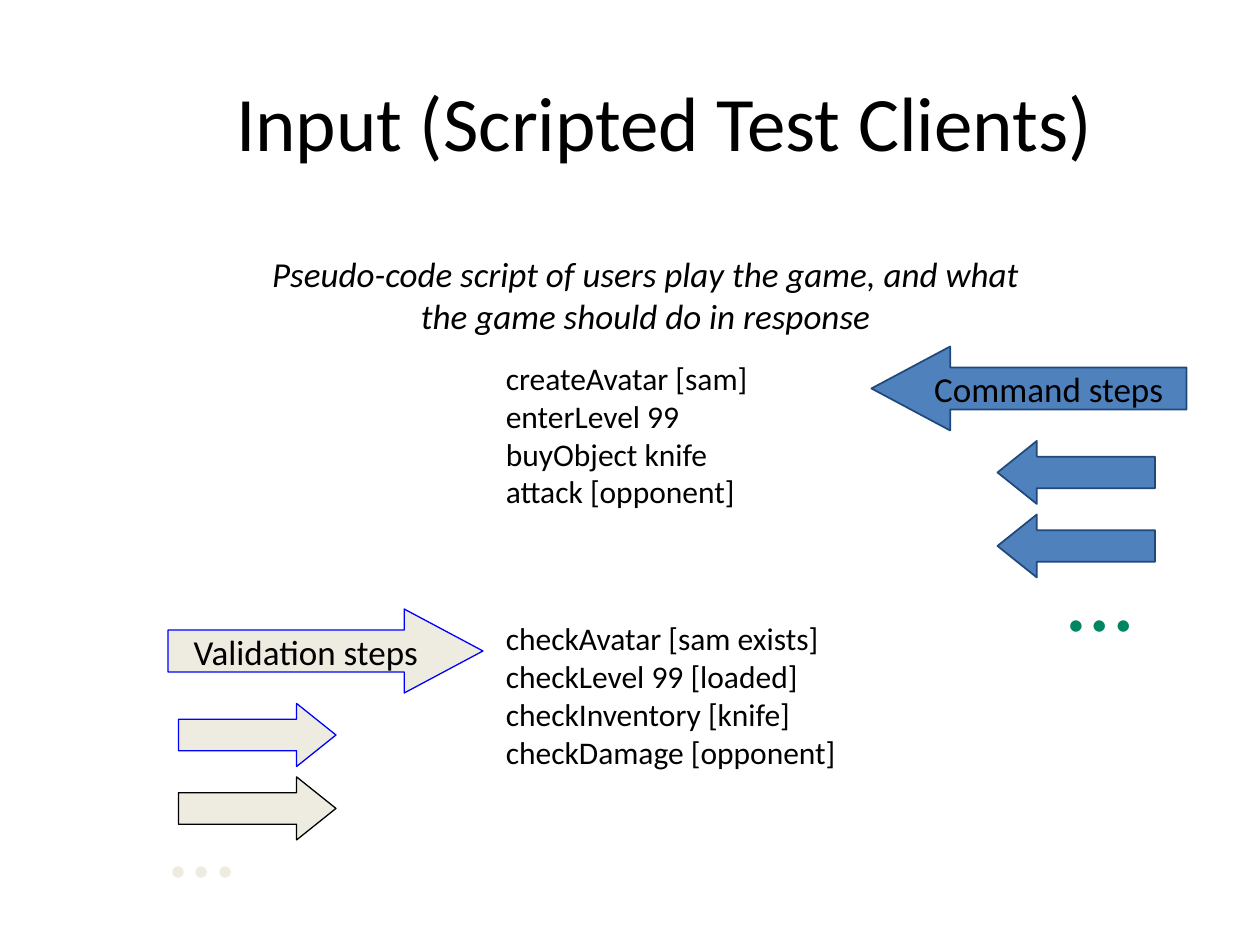
from dataclasses import dataclass

from pptx import Presentation
from pptx import util as u
from pptx.dml.color import RGBColor
from pptx.enum import shapes, text

WIDE, HIGH = 10, 7.5
COLS, ROWS = 120, 90  # grid of 1/12 inch squares


@dataclass(frozen=True)
class Theme:
    font: str = "Calibri"
    ink: str = "000000"
    blue: str = "4F81BD"
    navy: str = "1F497D"
    cream: str = "EEECE1"
    bright: str = "0000FF"
    green: str = "018562"
    title: int = 44
    label: int = 20
    code: int = 18
    dots: int = 54


THEME = Theme()
LEFT = shapes.MSO_SHAPE.LEFT_ARROW
RIGHT = shapes.MSO_SHAPE.RIGHT_ARROW
CENTER = text.PP_ALIGN.CENTER


def grid(col, row, cols, rows):
    """Turn grid columns and rows into left, top, width, height."""
    across, down = WIDE / COLS, HIGH / ROWS
    return [u.Inches(n) for n in
            (col * across, row * down, cols * across, rows * down)]


def write(frame, words, size, color=THEME.ink, align=None, italic=None):
    frame.text = words
    for para in frame.paragraphs:
        para.alignment = align
        for run in para.runs:
            font = run.font
            font.name = THEME.font
            font.size = u.Pt(size)
            font.italic = italic
            font.color.rgb = RGBColor.from_string(color)


def add_title(slide, words, area):
    title = slide.shapes.title
    title.left, title.top, title.width, title.height = grid(*area)
    title.text_frame.vertical_anchor = text.MSO_ANCHOR.MIDDLE
    write(title.text_frame, words, THEME.title, align=CENTER)


def add_text(slide, words, area, size, **look):
    frame = slide.shapes.add_textbox(*grid(*area)).text_frame
    frame.word_wrap = True
    write(frame, words, size, **look)


def add_arrow(slide, kind, area, fill, line, weight, words=""):
    arrow = slide.shapes.add_shape(kind, *grid(*area))
    # The head is a quarter of the arrow's length.
    arrow.adjustments[0] = 0.5
    arrow.adjustments[1] = area[2] / 4 / area[3]
    arrow.shadow.inherit = False
    arrow.fill.solid()
    arrow.fill.fore_color.rgb = RGBColor.from_string(fill)
    arrow.line.color.rgb = RGBColor.from_string(line)
    arrow.line.width = u.Pt(weight)
    if words:
        frame = arrow.text_frame
        frame.word_wrap = False
        frame.vertical_anchor = text.MSO_ANCHOR.MIDDLE
        write(frame, words, THEME.label, align=CENTER)


def add_steps(slide, kind, label, spots, fill, lines, weight):
    """Add a large labelled arrow followed by small plain ones."""
    for i, (spot, line) in enumerate(zip(spots, lines)):
        size = (15, 6) if i else (30, 8)
        add_arrow(slide, kind, spot + size, fill, line, weight,
                  "" if i else label)


def main():
    deck = Presentation()
    deck.slide_width, deck.slide_height = u.Inches(WIDE), u.Inches(HIGH)
    slide = deck.slides.add_slide(deck.slide_layouts[5])

    add_title(slide, "Input (Scripted Test Clients)", (16.8, 5, 93, 13))

    add_steps(slide, LEFT, "Command steps", [(83, 33), (95, 42), (95, 49)],
              THEME.blue, [THEME.navy] * 3, 1)
    add_text(slide, "…", (100.5, 50.6, 11.4, 12), THEME.dots,
             color=THEME.green)

    add_steps(slide, RIGHT, "Validation steps", [(16, 58), (17, 67), (17, 74)],
              THEME.cream, [THEME.bright, THEME.bright, THEME.ink], 0.75)
    add_text(slide, "…", (15, 74, 11.4, 12), THEME.dots, color=THEME.cream)

    add_text(slide, "Pseudo-code script of users play the game, and what "
             "the game should do in response", (23, 23.5, 77, 9.2),
             THEME.label, align=CENTER, italic=True)
    add_text(slide, "createAvatar [sam]\nenterLevel 99\n"
             "buyObject knife\nattack [opponent]",
             (47, 33.6, 36, 20.4), THEME.code)
    add_text(slide, "checkAvatar [sam exists]\ncheckLevel 99 [loaded]\n"
             "checkInventory [knife]\ncheckDamage [opponent]",
             (47, 58.4, 48, 20.4), THEME.code)

    deck.save("out.pptx")


if __name__ == "__main__":
    main()
